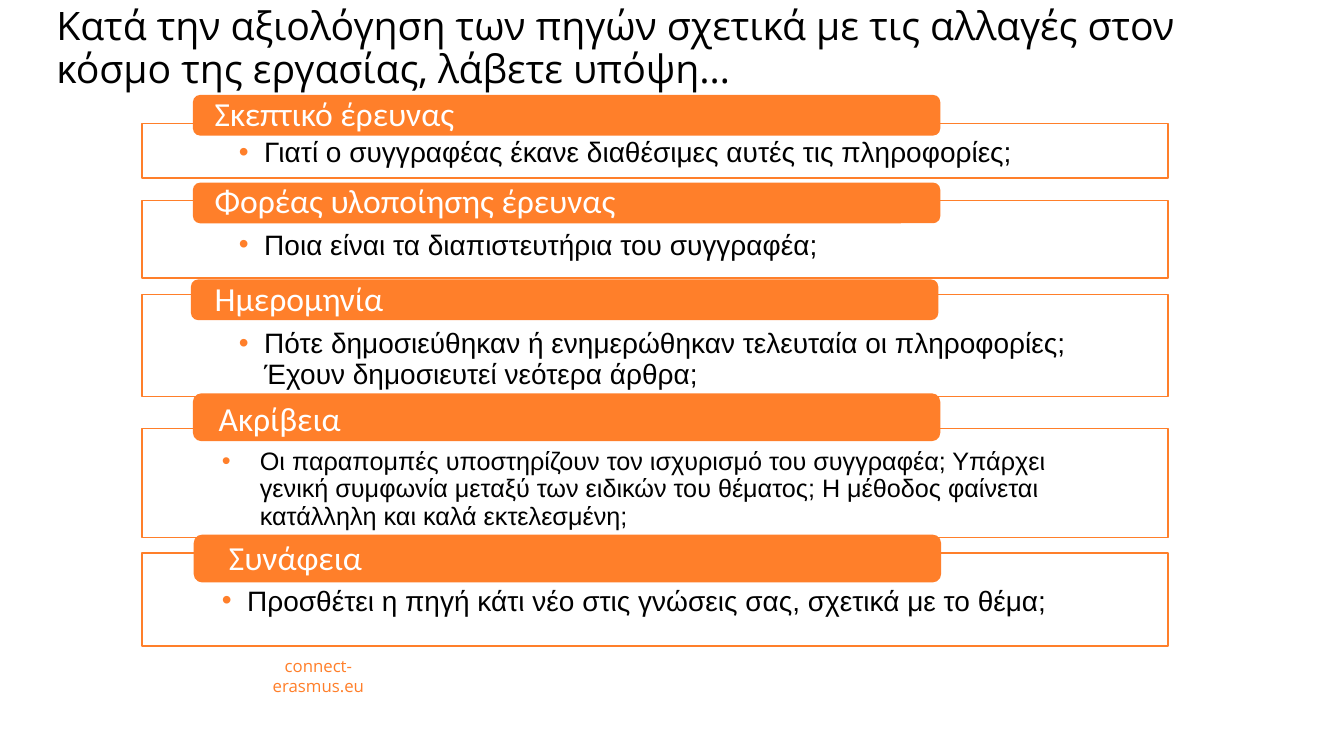
from lxml import etree
from pptx import Presentation
from pptx.dml.color import RGBColor
from pptx.enum.shapes import MSO_SHAPE
from pptx.enum.text import MSO_ANCHOR, MSO_AUTO_SIZE, PP_ALIGN
from pptx.oxml.ns import qn
from pptx.util import Cm, Pt

RECTANGLE, ROUNDED = MSO_SHAPE.RECTANGLE, MSO_SHAPE.ROUNDED_RECTANGLE
TOP, MIDDLE, BOTTOM = MSO_ANCHOR.TOP, MSO_ANCHOR.MIDDLE, MSO_ANCHOR.BOTTOM
LEFT, CENTER = PP_ALIGN.LEFT, PP_ALIGN.CENTER
NO_AUTOFIT = MSO_AUTO_SIZE.NONE

COLORS = {"orange": "FF7F2A", "white": "FFFFFF", "black": "000000"}
FRAME_LEFT, FRAME_WIDTH = 3.58, 25.86
BAR_WIDTH, HEADING_WIDTH = 18.8, 18.72
BODY_INSETS = (2.44, 0.36, 2.44, 0.41)
HEADING_INSETS = (0.84, 0, 0.84, 0)
TITLE = ("Κατά την αξιολόγηση των πηγών σχετικά με τις αλλαγές στον "
         "κόσμο της εργασίας, λάβετε υπόψη…")

# Each criterion: heading, question, frame (top, height), bar (left, top, height),
# heading position (left, top), question (left, top, size, indent)
CRITERIA = [
    ("Σκεπτικό έρευνας",
     "Γιατί ο συγγραφέας έκανε διαθέσιμες αυτές τις πληροφορίες;",
     (3.12, 1.37), (4.88, 2.41, 0.99), (4.57, 2.46), (3.58, 3.12, 20, 0.64)),
    ("Φορέας υλοποίησης έρευνας",
     "Ποια είναι τα διαπιστευτήρια του συγγραφέα;",
     (5.05, 1.96), (4.88, 4.62, 0.99), (4.57, 4.65), (3.58, 5.46, 20, 0.64)),
    ("Ημερομηνία",
     "Πότε δημοσιεύθηκαν ή ενημερώθηκαν τελευταία οι πληροφορίες; "
     "Έχουν δημοσιευτεί νεότερα άρθρα;",
     (7.42, 2.57), (4.83, 7.06, 0.99), (4.57, 7.14), (3.58, 7.95, 20, 0.64)),
    ("Ακρίβεια",
     "Οι παραπομπές υποστηρίζουν τον ισχυρισμό του συγγραφέα; Υπάρχει "
     "γενική συμφωνία μεταξύ των ειδικών του θέματος; Η μέθοδος φαίνεται "
     "κατάλληλη και καλά εκτελεσμένη;",
     (10.8, 2.74), (4.88, 9.93, 1.17), (4.67, 10.06), (3.15, 10.95, 18, 0.96)),
    ("Συνάφεια",
     "Προσθέτει η πηγή κάτι νέο στις γνώσεις σας, σχετικά με το θέμα;",
     (13.94, 2.34), (4.9, 13.49, 1.17), (4.93, 13.56), (3.15, 14.43, 20, 0.64)),
]


class SlideBuilder:
    """Holds the style and the current slide, and adds its elements."""

    def __init__(self, deck):
        self.slide = deck.slides.add_slide(deck.slide_layouts[5])

    def color(self, name):
        return RGBColor.from_string(COLORS[name])

    def set_text(self, box, text, font, size, color, anchor=TOP, align=LEFT,
                 insets=(0.25, 0.13, 0.25, 0.13), spacing=0.9):
        frame = box.text_frame
        frame.word_wrap = True
        frame.auto_size = NO_AUTOFIT
        frame.vertical_anchor = anchor
        (frame.margin_left, frame.margin_top,
         frame.margin_right, frame.margin_bottom) = map(Cm, insets)
        para = frame.paragraphs[0]
        para.alignment = align
        para.line_spacing = spacing
        span = para.add_run()
        span.text = text
        span.font.name = font
        span.font.size = Pt(size)
        span.font.color.rgb = self.color(color)
        return para

    def title(self, text, place):
        box = self.slide.shapes.title
        box.left, box.top, box.width, box.height = map(Cm, place)
        self.set_text(box, text, "Open Sans", 28, "black", BOTTOM)

    def text(self, place, *content, **style):
        box = self.slide.shapes.add_textbox(*map(Cm, place))
        return self.set_text(box, *content, **style)

    def shape(self, kind, place, fill):
        shape = self.slide.shapes.add_shape(kind, *map(Cm, place))
        shape.shadow.inherit = False
        shape.fill.solid()
        shape.fill.fore_color.rgb = self.color(fill)
        shape.line.color.rgb = self.color("orange")
        shape.line.width = Pt(1)
        return shape

    def frame(self, place):
        shape = self.shape(RECTANGLE, place, "white")
        fill = shape._element.spPr.find(qn("a:solidFill"))
        etree.SubElement(fill.find(qn("a:srgbClr")), qn("a:alpha"), val="90000")

    def bullet(self, para, indent):
        para.level = 1
        properties = para._p.get_or_add_pPr()
        properties.set("marL", str(Cm(indent)))
        properties.set("indent", str(-Cm(indent)))
        tint = etree.SubElement(properties, qn("a:buClr"))
        etree.SubElement(tint, qn("a:srgbClr"), val=COLORS["orange"])
        etree.SubElement(properties, qn("a:buFont"), typeface="Arial")
        etree.SubElement(properties, qn("a:buChar"), char="•")

    def criterion(self, heading, question, frame, bar, heading_at, body):
        frame_top, frame_height = frame
        bar_left, bar_top, bar_height = bar
        left, top, size, indent = body
        self.frame((FRAME_LEFT, frame_top, FRAME_WIDTH, frame_height))
        para = self.text((left, top, FRAME_WIDTH, frame_height), question,
                         "Arial", size, "black", insets=BODY_INSETS)
        self.bullet(para, indent)
        self.shape(ROUNDED, (bar_left, bar_top, BAR_WIDTH, bar_height), "orange")
        self.text((*heading_at, HEADING_WIDTH, bar_height - 0.1), heading,
                  "Calibri", 24, "white", anchor=MIDDLE, insets=HEADING_INSETS)


def main():
    deck = Presentation()
    deck.slide_width, deck.slide_height = Cm(33.87), Cm(19.05)
    page = SlideBuilder(deck)
    page.title(TITLE, (1.17, 0.28, 29.21, 2.16))
    for criterion in CRITERIA:
        page.criterion(*criterion)
    page.text((5.79, 16.66, 4.47, 0.76), "connect-erasmus.eu", "Open Sans", 12,
              "orange", anchor=MIDDLE, align=CENTER, spacing=1.0)
    deck.save("out.pptx")


if __name__ == "__main__":
    main()
